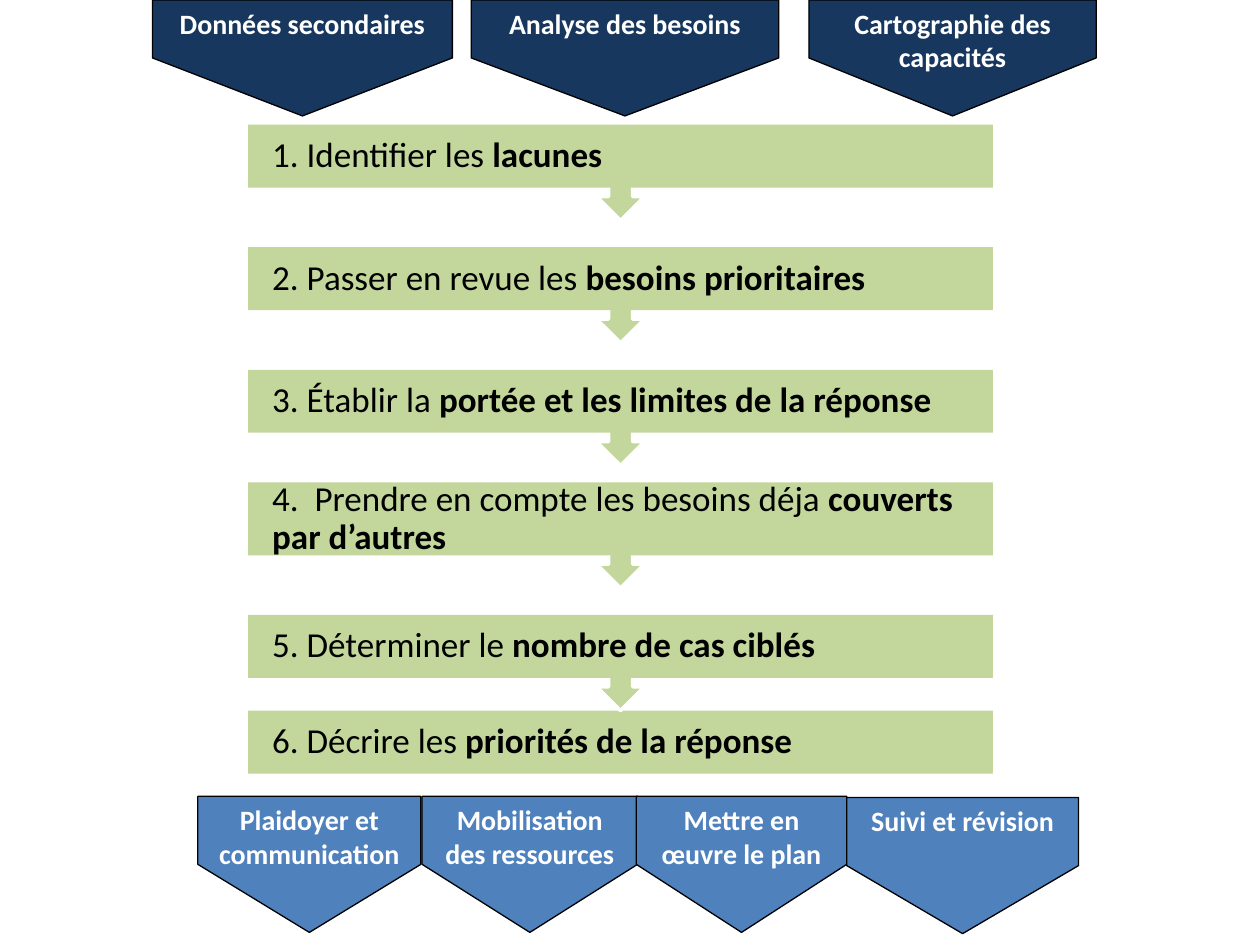
from pptx import Presentation
from pptx.dml.color import RGBColor
from pptx.enum.shapes import MSO_SHAPE
from pptx.enum.text import MSO_ANCHOR, PP_ALIGN
from pptx.util import Inches, Pt

RECT = MSO_SHAPE.RECTANGLE
CALLOUT = MSO_SHAPE.UP_ARROW_CALLOUT
PLATE = MSO_SHAPE.PENTAGON
TOP, MIDDLE = MSO_ANCHOR.TOP, MSO_ANCHOR.MIDDLE
LEFT, CENTER = PP_ALIGN.LEFT, PP_ALIGN.CENTER

COLORS = {"navy": "17375E", "blue": "4F81BD", "green": "C3D69B",
          "white": "FFFFFF", "black": "000000"}

INPUTS = [
    ("Données secondaires", 1.21, 2.38),
    ("Analyse des besoins", 3.74, 2.44),
    ("Cartographie des capacités", 6.42, 2.28),
]
STEPS = [
    ("1. Identifier les ", "lacunes"),
    ("2. Passer en revue les ", "besoins prioritaires"),
    ("3. Établir la ", "portée et les limites de la réponse"),
    ("4.  Prendre en compte les besoins déja ", "couverts par d’autres"),
    ("5. Déterminer le ", "nombre de cas ciblés"),
    ("6. Décrire les ", "priorités de la réponse"),
]
OUTPUTS = [
    ("Plaidoyer et communication", 1.57, 6.32, 1.77),
    ("Mobilisation des ressources", 3.35, 6.32, 1.71),
    ("Mettre en œuvre le plan", 5.05, 6.32, 1.67),
    ("Suivi et révision", 6.72, 6.33, 1.84),
]


class Board:
    font = "Calibri"

    def __init__(self, slide):
        self.slide = slide

    def shape(self, kind, box, fill, line=None, width=0.75):
        shape = self.slide.shapes.add_shape(kind, *map(Inches, box))
        shape.shadow.inherit = False
        shape.fill.solid()
        shape.fill.fore_color.rgb = RGBColor.from_string(COLORS[fill])
        if line:
            shape.line.color.rgb = RGBColor.from_string(COLORS[line])
            shape.line.width = Pt(width)
        else:
            shape.line.fill.background()
        return shape

    def label(self, shape, runs, color, size, align, **frame):
        text = shape.text_frame
        for key, value in {"word_wrap": True, **frame}.items():
            setattr(text, key, value)
        para = text.paragraphs[0]
        para.alignment = align
        for words, bold in runs:
            run = para.add_run()
            run.text = words
            style = {"name": self.font, "size": Pt(size), "bold": bold}
            for key, value in style.items():
                setattr(run.font, key, value)
            run.font.color.rgb = RGBColor.from_string(COLORS[color])
        return para

    def plate(self, words, left, top, width, height, fill):
        shift = (width - height) / 2
        box = (left + shift, top - shift, height, width)
        shape = self.shape(PLATE, box, fill, "black")
        shape.rotation = 90
        self.label(shape, [(words, True)], "white", 16, CENTER,
                   vertical_anchor=TOP)
        shape.text_frame._txBody.bodyPr.set("vert", "vert270")

    def step(self, runs, top, height, arrow):
        left, width, inset = 1.97, 5.91, Inches(0.19)
        if arrow is not None:
            back = self.shape(CALLOUT, (left, arrow, width, 0.76),
                              "green", "white", 2)
            back.rotation = 180
        box = self.shape(RECT, (left, top, width, height), "green")
        para = self.label(box, runs, "black", 20, LEFT,
                          vertical_anchor=MIDDLE,
                          margin_left=inset, margin_right=inset,
                          margin_top=inset, margin_bottom=inset)
        para.line_spacing = 0.9


def main():
    deck = Presentation()
    deck.slide_width, deck.slide_height = Inches(10), Inches(7.5)
    board = Board(deck.slides.add_slide(deck.slide_layouts[6]))

    first, last = 0.99, 5.64
    pitch = (4.88 - first) / 4
    for i, (plain, strong) in reversed(list(enumerate(STEPS))):
        runs = [(plain, False), (strong, True)]
        top = first + i * pitch
        if i == len(STEPS) - 1:
            board.step(runs, last, 0.5, None)
        elif i == 3:
            board.step(runs, top - 0.08, 0.58, top)
        else:
            board.step(runs, top, 0.5, top)

    for words, left, top, width in OUTPUTS:
        board.plate(words, left, top, width, 1.08, "blue")
    for words, left, width in INPUTS:
        board.plate(words, left, 0, width, 0.92, "navy")

    deck.save("out.pptx")


if __name__ == "__main__":
    main()
